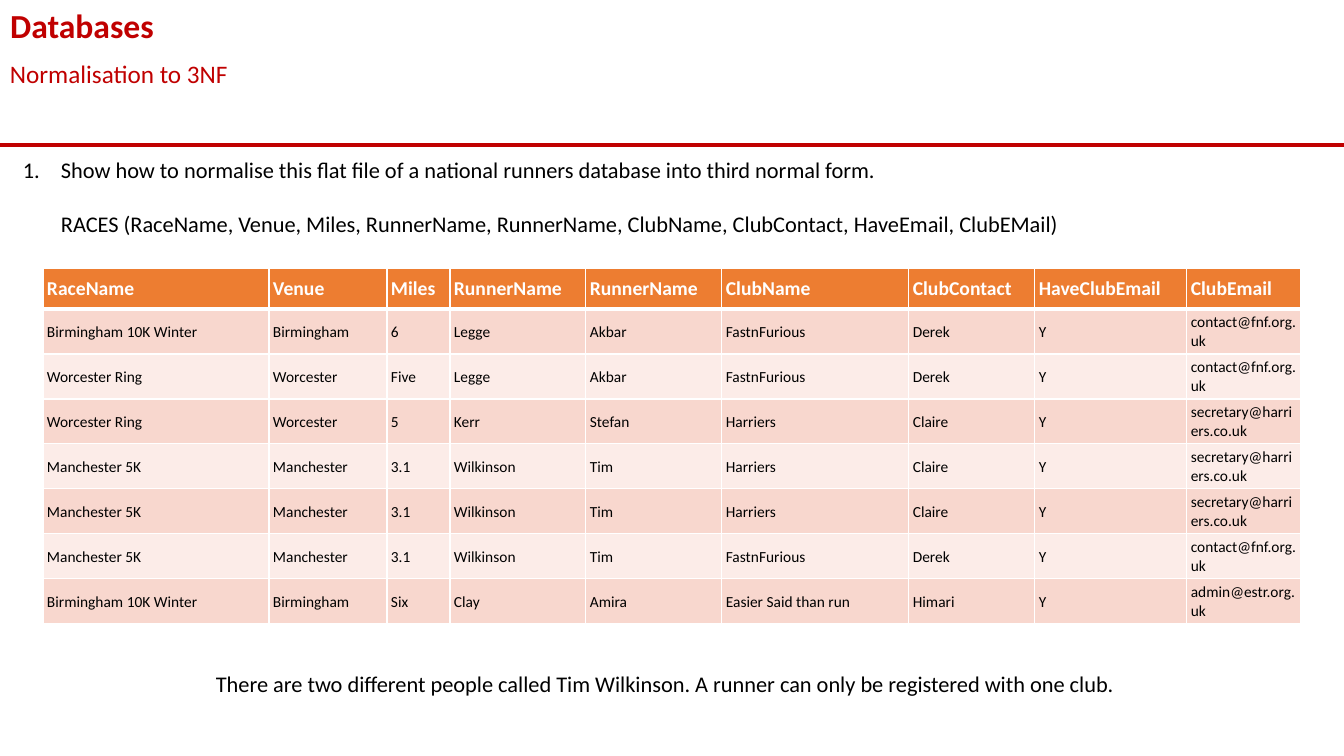
from lxml.etree import SubElement
from pptx import Presentation
from pptx.dml.color import RGBColor
from pptx.enum.shapes import MSO_CONNECTOR as CONNECTOR
from pptx.enum.text import MSO_ANCHOR as ANCHOR, MSO_AUTO_SIZE as AUTO_SIZE, PP_ALIGN as ALIGN
from pptx.oxml.ns import qn
from pptx.util import Emu, Pt

RED, BLACK, WHITE = "C00000", "000000", "FFFFFF"
ORANGE, BANDS = "ED7D31", ["F8D7CE", "FCECE8"]


def px(length):
    return Emu(round(length * 914400 / 100.8))


def write(paragraph, text, size, colour, bold=False):
    paragraph.text = text
    paragraph.alignment = ALIGN.LEFT
    font_format = {"name": "Calibri", "size": Pt(size), "bold": bold}
    for attribute, value in font_format.items():
        setattr(paragraph.font, attribute, value)
    paragraph.font.color.rgb = RGBColor.from_string(colour)


presentation = Presentation()
presentation.slide_width, presentation.slide_height = px(1344), px(756)
slide = presentation.slides.add_slide(presentation.slide_layouts[5])

title = slide.shapes.title
title_format = {"left": px(0), "top": px(0), "width": px(1344), "height": px(50)}
for attribute, value in title_format.items():
    setattr(title, attribute, value)
title.text_frame.auto_size = AUTO_SIZE.NONE
title.text_frame.vertical_anchor = ANCHOR.TOP
write(title.text_frame.paragraphs[0], "Databases", 24, RED, True)

rule = slide.shapes.add_connector(CONNECTOR.STRAIGHT, px(0), px(145), px(1344), px(145))
rule.line.color.rgb = RGBColor.from_string(RED)
rule.line.width = Pt(2.25)
SubElement(rule.element.spPr, qn("a:effectLst"))

text_boxes = [
    ((0, 53, 1344, 40), 18, RED, ["Normalisation to 3NF"]),
    ((13, 151, 1318, 92), 16, BLACK, [
        "Show how to normalise this flat file of a national runners database into third normal form.",
        "RACES (RaceName, Venue, Miles, RunnerName, RunnerName, ClubName, ClubContact, HaveEmail, ClubEMail)",
    ]),
    ((206, 665, 931, 37), 16, BLACK, [
        "There are two different people called Tim Wilkinson. A runner can only be registered with one club.",
    ]),
]
frames = []
for place, size, colour, lines in text_boxes:
    frame = slide.shapes.add_textbox(*map(px, place)).text_frame
    frame.word_wrap = True
    for number, line in enumerate(lines):
        paragraph = frame.add_paragraph() if number else frame.paragraphs[0]
        write(paragraph, line, size, colour)
    frames.append(frame)

question, relation = frames[1].paragraphs
relation.space_before = Pt(19.5)
for paragraph, indent in ((question, -38), (relation, 0)):
    properties = paragraph._p.get_or_add_pPr()
    properties.set("marL", str(px(38)))
    properties.set("indent", str(px(indent)))
numbering = question._p.pPr.makeelement(qn("a:buAutoNum"), {"type": "arabicPeriod"})
question._p.pPr.insert(0, numbering)

headers = ["RaceName", "Venue", "Miles", "RunnerName", "RunnerName",
           "ClubName", "ClubContact", "HaveClubEmail", "ClubEmail"]
clubs = {
    "FastnFurious": ["Derek", "Y", "contact@fnf.org.uk"],
    "Harriers": ["Claire", "Y", "secretary@harriers.co.uk"],
    "Easier Said than run": ["Himari", "Y", "admin@estr.org.uk"],
}
entries = [
    ["Birmingham 10K Winter", "Birmingham", "6", "Legge", "Akbar", "FastnFurious"],
    ["Worcester Ring", "Worcester", "Five", "Legge", "Akbar", "FastnFurious"],
    ["Worcester Ring", "Worcester", "5", "Kerr", "Stefan", "Harriers"],
    ["Manchester 5K", "Manchester", "3.1", "Wilkinson", "Tim", "Harriers"],
    ["Manchester 5K", "Manchester", "3.1", "Wilkinson", "Tim", "Harriers"],
    ["Manchester 5K", "Manchester", "3.1", "Wilkinson", "Tim", "FastnFurious"],
    ["Birmingham 10K Winter", "Birmingham", "Six", "Clay", "Amira", "Easier Said than run"],
]
rows = [headers] + [entry + clubs[entry[-1]] for entry in entries]
column_widths = [226, 118, 63, 136, 136, 187, 126, 152, 114]
row_heights = [41] + [45] * len(entries)
table = slide.shapes.add_table(
    len(rows), len(headers), px(43), px(268), px(sum(column_widths)), px(sum(row_heights))
).table
for column, width in zip(table.columns, column_widths):
    column.width = px(width)
for row, height in zip(table.rows, row_heights):
    row.height = px(height)

cell_format = {"margin_left": px(4), "margin_top": px(4), "margin_right": px(3),
               "margin_bottom": px(3), "vertical_anchor": ANCHOR.MIDDLE}
for row_number, values in enumerate(rows):
    is_header = row_number == 0
    fill = ORANGE if is_header else BANDS[(row_number - 1) % 2]
    size, colour = (14, WHITE) if is_header else (11, BLACK)
    borders = {"L": 1, "R": 1, "T": 3 if row_number == 1 else 1, "B": 3 if is_header else 1}
    for column_number, value in enumerate(values):
        cell = table.cell(row_number, column_number)
        for attribute, setting in cell_format.items():
            setattr(cell, attribute, setting)
        write(cell.text_frame.paragraphs[0], value, size, colour, is_header)
        for side, width in borders.items():
            border = SubElement(cell._tc.get_or_add_tcPr(), qn(f"a:ln{side}"), w=str(Pt(width)))
            SubElement(SubElement(border, qn("a:solidFill")), qn("a:srgbClr"), val=WHITE)
        cell.fill.solid()
        cell.fill.fore_color.rgb = RGBColor.from_string(fill)

presentation.save("out.pptx")
